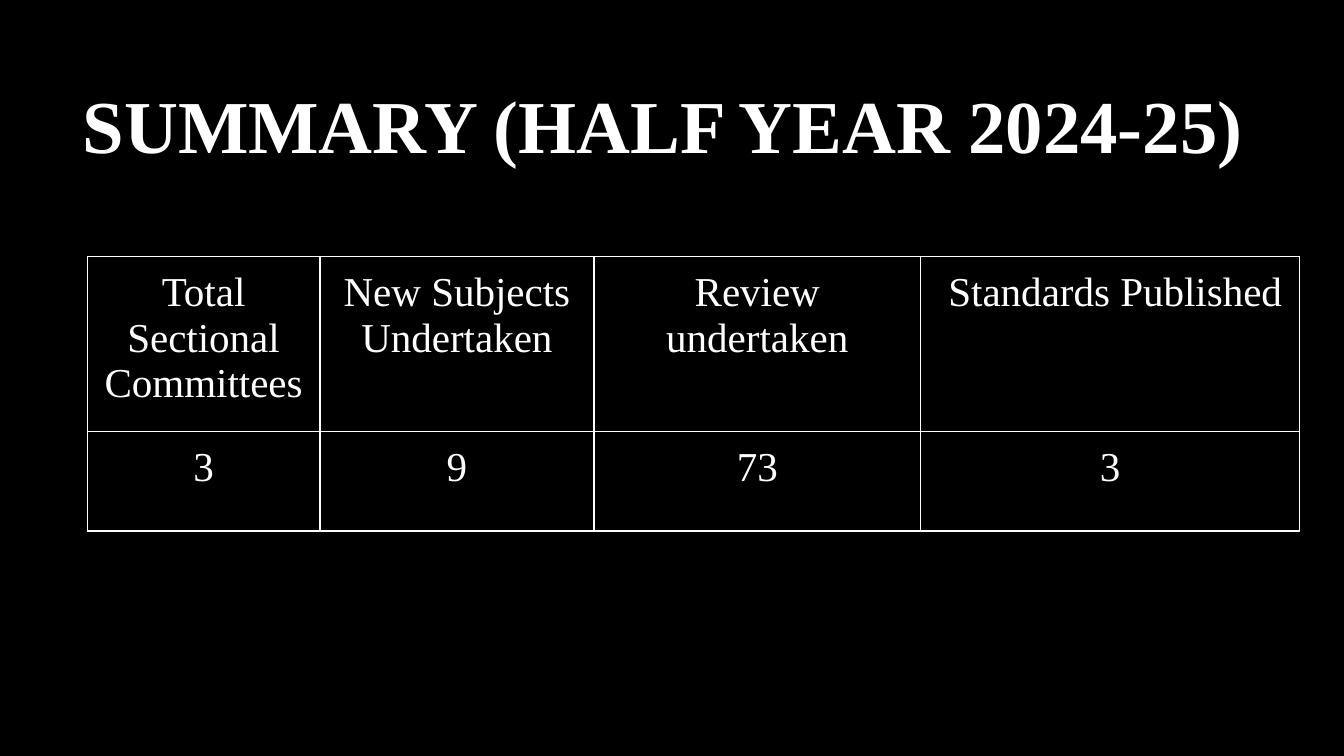
from lxml import etree
from pptx import Presentation
from pptx.dml.color import RGBColor
from pptx.enum import text
from pptx.oxml import ns
from pptx.util import Inches, Pt

BLACK, WHITE = "000000", "FFFFFF"


def rgb(value):
    return RGBColor.from_string(value)


def write(tf, words, size, bold=False):
    p = tf.paragraphs[0]
    p.alignment = text.PP_ALIGN.CENTER
    r = p.add_run()
    r.text = words
    font = {"name": "Times New Roman", "size": Pt(size), "bold": bold}
    for key, value in font.items():
        setattr(r.font, key, value)
    r.font.color.rgb = rgb(WHITE)


prs = Presentation()
prs.slide_width = Inches(10)
prs.slide_height = prs.slide_width * 9 // 16
s = prs.slides.add_slide(prs.slide_layouts[6])
s.background.fill.solid()
s.background.fill.fore_color.rgb = rgb(BLACK)

# Title
title = s.shapes.add_textbox(Inches(0), Inches(0.49), Inches(10), Inches(0.63))
tf = title.text_frame
frame = {"word_wrap": True, "vertical_anchor": text.MSO_ANCHOR.TOP,
         "margin_left": Inches(0.1), "margin_right": Inches(0.1),
         "margin_top": Inches(0.1), "margin_bottom": Inches(0.1)}
for key, value in frame.items():
    setattr(tf, key, value)
write(tf, "SUMMARY (HALF YEAR 2024-25) ", 40, bold=True)

# Summary table
rows = [
    ["Total Sectional Committees", "New Subjects Undertaken",
     "Review undertaken", " Standards Published"],
    ["3", "9", "73", "3"],
]
widths = [1.73, 2.04, 2.43, 2.82]
heights = [0.72, 0.74]
sp = s.shapes.add_table(len(rows), len(widths), Inches(0.65), Inches(1.91),
                        Inches(sum(widths)), Inches(sum(heights)))
table = sp.table
table.first_row = table.horz_banding = False
for column, width in zip(table.columns, widths):
    column.width = Inches(width)
for row, height, words in zip(table.rows, heights, rows):
    row.height = Inches(height)
    for cell, word in zip(row.cells, words):
        for side in ("left", "right", "top", "bottom"):
            setattr(cell, f"margin_{side}", Inches(0.1))
        tc_pr = cell._tc.get_or_add_tcPr()
        for edge in ("L", "R", "T", "B"):
            ln = etree.SubElement(tc_pr, ns.qn(f"a:ln{edge}"), w=str(Pt(1)))
            fill = etree.SubElement(ln, ns.qn("a:solidFill"))
            etree.SubElement(fill, ns.qn("a:srgbClr"), val=WHITE)
        cell.fill.solid()
        cell.fill.fore_color.rgb = rgb(BLACK)
        write(cell.text_frame, word, 22)
# The header row grows to three lines, so the frame is taller than its rows
sp.height = Inches(2.04)

prs.save("out.pptx")
